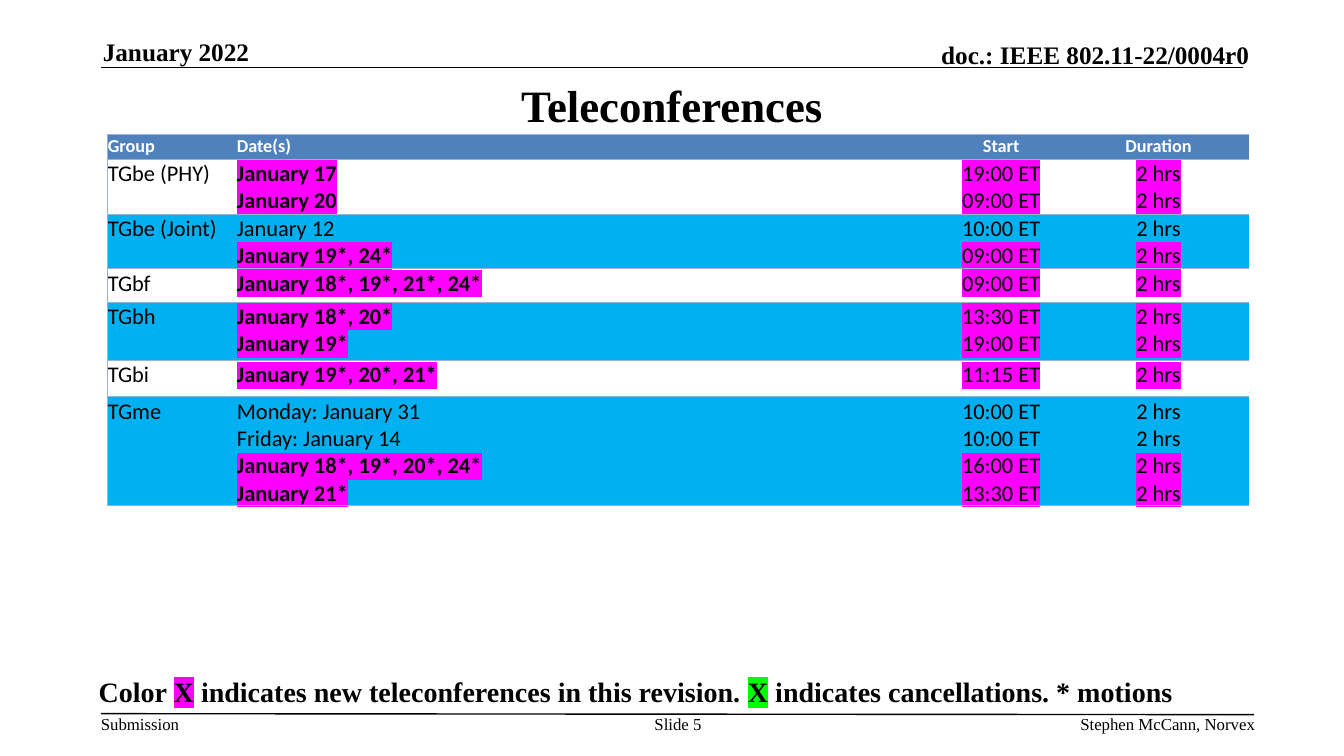
"""Build the teleconference schedule slide."""
import pptx
import pptx.util
import pptx.dml.color
import pptx.enum.shapes
import pptx.enum.text
import pptx.oxml.ns
import lxml.etree

Inches = pptx.util.Inches
Pt = pptx.util.Pt
RGBColor = pptx.dml.color.RGBColor
ALIGN = pptx.enum.text.PP_ALIGN
ANCHOR = pptx.enum.text.MSO_ANCHOR
qn = pptx.oxml.ns.qn

BLACK = RGBColor(0x00, 0x00, 0x00)
WHITE = RGBColor(0xFF, 0xFF, 0xFF)
HEADER_BLUE = RGBColor(0x4F, 0x81, 0xBD)
BAND_BLUE = RGBColor(0x00, 0xB0, 0xF0)
BORDER_BLUE = RGBColor(0x95, 0xB3, 0xD7)
NEW_MAGENTA = RGBColor(0xFF, 0x00, 0xFF)
CANCELLED_GREEN = RGBColor(0x00, 0xFF, 0x00)


def style_run(run, size, bold=False, color=BLACK, font="Times New Roman", highlight=None):
    run.font.size = Pt(size)
    run.font.bold = bold
    run.font.name = font
    run.font.color.rgb = color
    if highlight is not None:
        mark = lxml.etree.Element(qn("a:highlight"))
        lxml.etree.SubElement(mark, qn("a:srgbClr"), val=str(highlight))
        run.font._element.find(qn("a:solidFill")).addnext(mark)


def fit_frame(frame, anchor, margin_x=0, margin_y=0):
    frame.word_wrap = True
    frame.vertical_anchor = anchor
    frame.margin_left = frame.margin_right = Inches(margin_x)
    frame.margin_top = frame.margin_bottom = Inches(margin_y)


deck = pptx.Presentation()
deck.slide_width, deck.slide_height = Inches(13.33), Inches(7.5)
slide = deck.slides.add_slide(deck.slide_layouts[5])

title = slide.shapes.title
title.left, title.top, title.width, title.height = map(Inches, (1, 0.75, 11.33, 0.58))
title.text_frame.text = "Teleconferences"
fit_frame(title.text_frame, ANCHOR.MIDDLE, 0.1, 0.05)
title.text_frame.paragraphs[0].alignment = ALIGN.CENTER
style_run(title.text_frame.paragraphs[0].runs[0], 32, True)

for start_x, start_y, end_x, end_y in [(1, 0.67, 12.33, 0.67), (1, 7.08, 12.44, 7.09)]:
    rule = slide.shapes.add_connector(
        pptx.enum.shapes.MSO_CONNECTOR.STRAIGHT,
        Inches(start_x), Inches(start_y), Inches(end_x), Inches(end_y))
    rule.line.color.rgb = BLACK
    rule.line.width = Pt(1)
    lxml.etree.SubElement(rule._element.spPr, qn("a:effectLst"))

margin_notes = [
    ("January 2022", (1.02, 0.36, 2.73, 0.3), 18, ALIGN.LEFT, ANCHOR.BOTTOM),
    ("doc.: IEEE 802.11-22/0004r0", (7.29, 0.39, 5.1, 0.3), 18, ALIGN.RIGHT, ANCHOR.BOTTOM),
    ("Submission", (1, 7.08, 0.79, 0.2), 12, ALIGN.LEFT, ANCHOR.TOP),
    ("Slide 5", (6.34, 7.08, 0.77, 0.4), 12, ALIGN.CENTER, ANCHOR.TOP),
    ("Stephen McCann, Norvex", (7.81, 7.08, 4.64, 0.2), 12, ALIGN.RIGHT, ANCHOR.TOP),
]
for wording, place, size, align, anchor in margin_notes:
    note = slide.shapes.add_textbox(*map(Inches, place)).text_frame
    note.text = wording
    fit_frame(note, anchor)
    note.paragraphs[0].alignment = align
    style_run(note.paragraphs[0].runs[0], size, size == 18)

legend = slide.shapes.add_textbox(Inches(0.88), Inches(6.64), Inches(11.79), Inches(0.44)).text_frame
fit_frame(legend, ANCHOR.TOP, 0.1, 0.05)
for wording, highlight in [
    ("Color ", None),
    ("X", NEW_MAGENTA),
    (" indicates new teleconferences in this revision. ", None),
    ("X", CANCELLED_GREEN),
    (" indicates cancellations. * motions", None),
]:
    run = legend.paragraphs[0].add_run()
    run.text = wording
    style_run(run, 20, True, highlight=highlight)

headings = ["Group", "Date(s)", "Start", "Duration"]
column_widths = [1.28, 6.93, 1.32, 1.8]
schedule = [
    ("TGbe (PHY)", 0.54, [("January 17", "19:00 ET", True), ("January 20", "09:00 ET", True)]),
    ("TGbe (Joint)", 0.54, [("January 12", "10:00 ET", False),
                            ("January 19*, 24*", "09:00 ET", True)]),
    ("TGbf", 0.33, [("January 18*, 19*, 21*, 24*", "09:00 ET", True)]),
    ("TGbh", 0.58, [("January 18*, 20*", "13:30 ET", True), ("January 19*", "19:00 ET", True)]),
    ("TGbi", 0.36, [("January 19*, 20*, 21*", "11:15 ET", True)]),
    ("TGme", 1.08, [("Monday: January 31", "10:00 ET", False),
                    ("Friday: January 14", "10:00 ET", False),
                    ("January 18*, 19*, 20*, 24*", "16:00 ET", True),
                    ("January 21*", "13:30 ET", True)]),
]
rows = [(0.25, [[(heading, False)] for heading in headings])]
for group, height, calls in schedule:
    rows.append((height, [
        [(group, False)],
        [(dates, new) for dates, start, new in calls],
        [(start, new) for dates, start, new in calls],
        [("2 hrs", new) for dates, start, new in calls],
    ]))

timetable = slide.shapes.add_table(
    len(rows), len(headings), Inches(1.06), Inches(1.33), Inches(11.33), Inches(3.68)).table
timetable.horz_banding = False
for column, width in zip(timetable.columns, column_widths):
    column.width = Inches(width)

for row_index, (height, entries) in enumerate(rows):
    timetable.rows[row_index].height = Inches(height)
    for column_index, lines in enumerate(entries):
        cell = timetable.cell(row_index, column_index)
        cell.margin_left = cell.margin_right = cell.margin_top = Inches(0.01)
        cell.margin_bottom = 0
        cell_format = cell._tc.get_or_add_tcPr()
        for side in "LRTB":
            border = lxml.etree.SubElement(cell_format, qn(f"a:ln{side}"), w=str(Pt(0.5)))
            if side in "TB" or (side == "L" and column_index == 0):
                paint = lxml.etree.SubElement(border, qn("a:solidFill"))
                lxml.etree.SubElement(paint, qn("a:srgbClr"), val=str(BORDER_BLUE))
            else:
                lxml.etree.SubElement(border, qn("a:noFill"))
        if row_index % 2 and row_index:
            cell.fill.background()
        else:
            cell.fill.solid()
            cell.fill.fore_color.rgb = BAND_BLUE if row_index else HEADER_BLUE

        cell.text_frame.text = "\n".join(wording for wording, new in lines)
        for paragraph, (wording, new) in zip(cell.text_frame.paragraphs, lines):
            paragraph.alignment = ALIGN.CENTER if column_index > 1 else ALIGN.LEFT
            style_run(
                paragraph.runs[0],
                size=16 if row_index else 13,
                bold=row_index == 0 or (new and column_index == 1),
                color=BLACK if row_index else WHITE,
                font="Calibri",
                highlight=NEW_MAGENTA if new else None)

deck.save("out.pptx")
